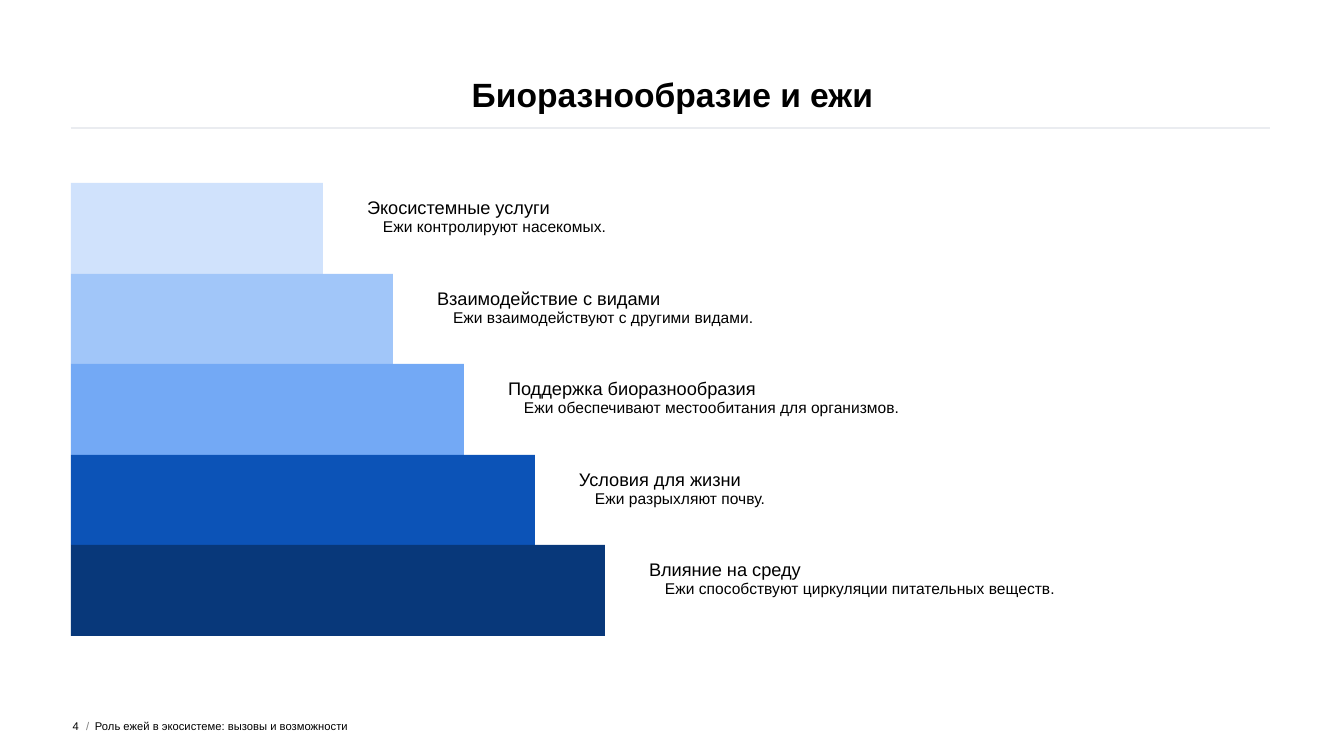
from lxml import etree
from pptx import Presentation
from pptx.dml.color import RGBColor
from pptx.enum.shapes import MSO_CONNECTOR, MSO_SHAPE
from pptx.enum.text import MSO_ANCHOR, PP_ALIGN
from pptx.oxml.ns import qn
from pptx.util import Inches, Pt

STRAIGHT, RECTANGLE = MSO_CONNECTOR.STRAIGHT, MSO_SHAPE.RECTANGLE
TOP, MIDDLE, BOTTOM = MSO_ANCHOR.TOP, MSO_ANCHOR.MIDDLE, MSO_ANCHOR.BOTTOM
LEFT, CENTER, RIGHT = PP_ALIGN.LEFT, PP_ALIGN.CENTER, PP_ALIGN.RIGHT

BLACK = RGBColor(0x00, 0x00, 0x00)
GRAY = RGBColor(0x80, 0x80, 0x80)
RULE_GRAY = RGBColor(0xEA, 0xEC, 0xF0)
FONT = "Arial"

SLIDE_WIDTH, SLIDE_HEIGHT = 1344, 756
SCALE = Inches(7.5) / SLIDE_HEIGHT

STEPS = [
    ("Экосистемные услуги", "Ежи контролируют насекомых.",
     RGBColor(0xD0, 0xE2, 0xFC)),
    ("Взаимодействие с видами", "Ежи взаимодействуют с другими видами.",
     RGBColor(0xA1, 0xC6, 0xF9)),
    ("Поддержка биоразнообразия",
     "Ежи обеспечивают местообитания для организмов.",
     RGBColor(0x73, 0xA9, 0xF5)),
    ("Условия для жизни", "Ежи разрыхляют почву.",
     RGBColor(0x0C, 0x53, 0xB7)),
    ("Влияние на среду", "Ежи способствуют циркуляции питательных веществ.",
     RGBColor(0x08, 0x38, 0x7A)),
]
MARGIN = 71
STEPS_TOP, STEPS_HEIGHT = 183, 453
FIRST_WIDTH, LAST_WIDTH = 252, 534
LABEL_GAP, LABEL_DROP, DETAIL_INDENT = 44, 16, 16


def px(*lengths):
    """Turn px lengths into a list of EMU lengths."""
    return [round(length * SCALE) for length in lengths]


def add_text(box, lines, anchor=TOP, align=LEFT, color=BLACK, bold=False,
             before=0):
    """Add a text box without insets; lines holds (text, size) pairs."""
    frame = slide.shapes.add_textbox(*px(*box)).text_frame
    frame.word_wrap = True
    frame.vertical_anchor = anchor
    frame.margin_left = frame.margin_right = 0
    frame.margin_top = frame.margin_bottom = 0
    frame.text = "\n".join(text for text, size in lines)
    for paragraph, (text, size) in zip(frame.paragraphs, lines):
        paragraph.alignment = align
        paragraph.space_before = Pt(before)
        font = paragraph.runs[0].font
        font.name, font.size, font.bold = FONT, Pt(size), bold
        font.color.rgb = color
    return frame


prs = Presentation()
prs.slide_width, prs.slide_height = px(SLIDE_WIDTH, SLIDE_HEIGHT)
slide = prs.slides.add_slide(prs.slide_layouts[6])

# Title and rule
add_text((MARGIN, 0, 1203, 114), [("Биоразнообразие и ежи", 24)],
         BOTTOM, CENTER, bold=True, before=10)
title_rule = slide.shapes.add_connector(STRAIGHT, *px(MARGIN, 128, 1270, 128))
title_rule.line.color.rgb = RULE_GRAY
title_rule.line.width = Pt(2)
etree.SubElement(title_rule._element.spPr, qn("a:effectLst"))

# Staircase with labels
last = len(STEPS) - 1
for i, (heading, detail, color) in enumerate(STEPS):
    top = STEPS_TOP + round(STEPS_HEIGHT * i / len(STEPS))
    bottom = STEPS_TOP + round(STEPS_HEIGHT * (i + 1) / len(STEPS))
    width = FIRST_WIDTH + round((LAST_WIDTH - FIRST_WIDTH) * i / last)

    step = slide.shapes.add_shape(
        RECTANGLE, *px(MARGIN, top, width, bottom - top))
    step.shadow.inherit = False
    step.fill.solid()
    step.fill.fore_color.rgb = color
    step.line.fill.background()

    label = add_text(
        (MARGIN + width + LABEL_GAP, top + LABEL_DROP, 585, 60),
        [(heading, 13), (detail, 11.1)])
    for paragraph in label.paragraphs:
        paragraph.line_spacing = 0.9
    detail_format = label.paragraphs[1]._p.get_or_add_pPr()
    detail_format.set("marL", str(px(DETAIL_INDENT)[0]))
    detail_format.set("indent", "0")

# Footer
add_text((47, 696, 32, 60), [("4", 8)], MIDDLE, RIGHT, before=10)
add_text((83, 696, 12, 60), [(" /", 8)], MIDDLE, color=GRAY)
add_text((95, 696, 868, 60),
         [("Роль ежей в экосистеме: вызовы и возможности", 8)],
         MIDDLE, before=10)

prs.save("out.pptx")
